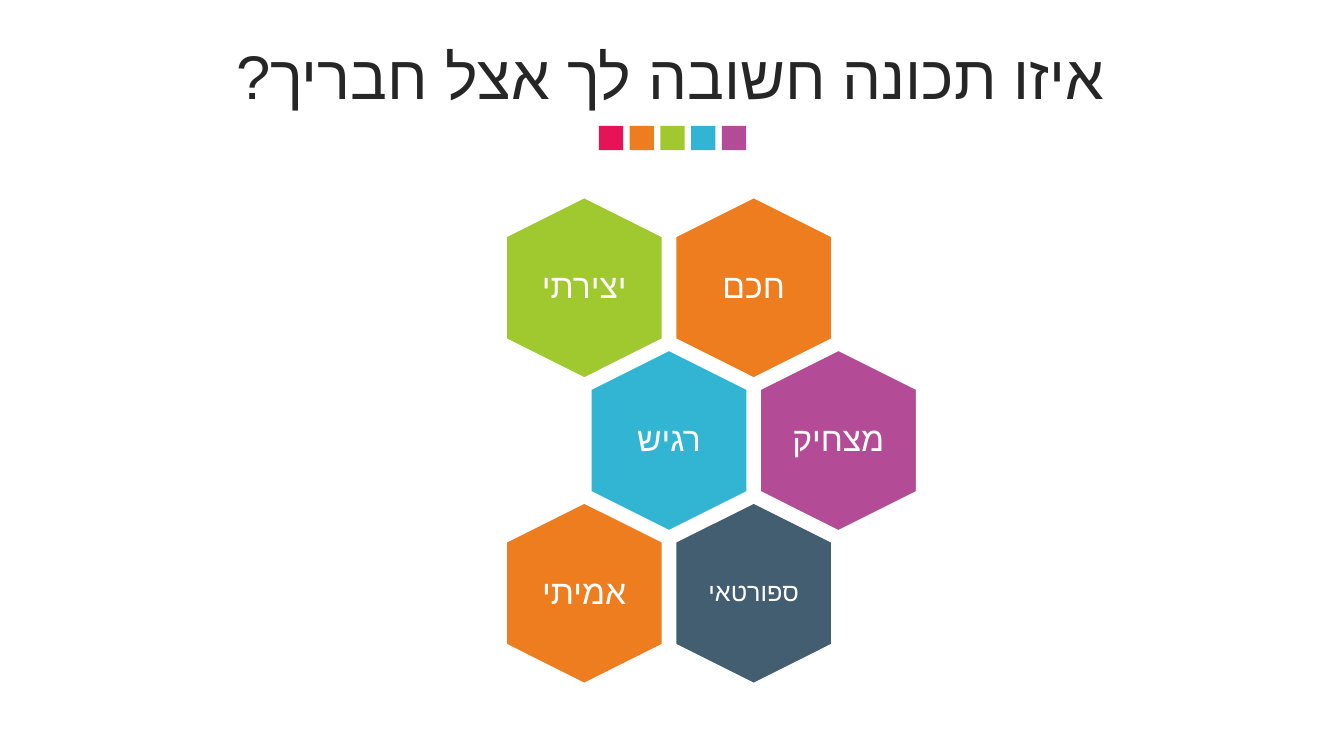
from dataclasses import dataclass

from pptx import Presentation
from pptx.dml.color import RGBColor
from pptx.enum.shapes import MSO_SHAPE
from pptx.enum.text import MSO_ANCHOR, MSO_AUTO_SIZE, PP_ALIGN
from pptx.oxml.ns import qn
from pptx.util import Inches, Pt

RECT, HEX = MSO_SHAPE.RECTANGLE, MSO_SHAPE.HEXAGON
MIDDLE, CENTER, FIXED = MSO_ANCHOR.MIDDLE, PP_ALIGN.CENTER, MSO_AUTO_SIZE.NONE


@dataclass
class Theme:
    font: str = "Arial"
    ink: str = "262626"
    white: str = "FFFFFF"
    red: str = "E61358"
    orange: str = "ED7D1F"
    green: str = "A0C82F"
    blue: str = "32B5D3"
    purple: str = "B44B97"
    slate: str = "435E71"
    head: int = 44
    label: int = 24
    small: int = 18


theme = Theme()


def write(box, text, size, color, inset=0.0):
    """Fill a box with one centred right-to-left line."""
    frame = box.text_frame
    frame.word_wrap = True
    frame.auto_size = FIXED
    frame.vertical_anchor = MIDDLE
    frame.margin_left = frame.margin_right = Inches(inset)
    frame.margin_top = frame.margin_bottom = Inches(inset / 2)
    para = frame.paragraphs[0]
    para.alignment = CENTER
    para.line_spacing = 0.9
    para._p.get_or_add_pPr().set("rtl", "1")
    run = para.add_run()
    run.text = text
    run.font.size = Pt(size)
    run.font.name = theme.font
    run.font.color.rgb = RGBColor.from_string(color)
    script = run._r.get_or_add_rPr().makeelement(qn("a:cs"), {"typeface": theme.font})
    run.font._element.append(script)


def draw(kind, left, top, width, height, color):
    """Add a flat filled shape without an outline."""
    shape = slide.shapes.add_shape(
        kind, Inches(left), Inches(top), Inches(width), Inches(height))
    shape.shadow.inherit = False
    shape.fill.solid()
    shape.fill.fore_color.rgb = RGBColor.from_string(color)
    shape.line.fill.background()
    return shape


deck = Presentation()
deck.slide_width, deck.slide_height = Inches(13.33), Inches(7.5)
slide = deck.slides.add_slide(deck.slide_layouts[5])

# Title
title = slide.shapes.title
title.left, title.top = Inches(0.24), Inches(0.39)
title.width, title.height = Inches(12.66), Inches(0.79)
write(title, "איזו תכונה חשובה לך אצל חבריך? ", theme.head, theme.ink, inset=0.1)

# Row of colour squares
squares = [theme.red, theme.orange, theme.green, theme.blue, theme.purple]
for i, color in enumerate(squares):
    draw(RECT, 5.94 + i * 0.305, 1.25, 0.24, 0.24, color)

# Honeycomb of traits: row, column, text, colour, size
traits = [
    (0, 1, "חכם", theme.orange, theme.label),
    (0, 0, "יצירתי", theme.green, theme.label),
    (1, 0, "רגיש", theme.blue, theme.label),
    (1, 1, "מצחיק", theme.purple, theme.label),
    (2, 1, "ספורטאי", theme.slate, theme.small),
    (2, 0, "אמיתי", theme.orange, theme.label),
]
long, short = 1.79, 1.55
wide, tall = 1.07, 1.23
step, drop = 1.68, 1.515
for row, col, text, color, size in traits:
    # Odd rows shift by half a step
    left = 4.9 + (col + row % 2 / 2) * step
    top = 2.08 + row * drop
    cell = draw(HEX, left, top, long, short, color)
    cell.rotation = 90
    cell.adjustments[0] = 0.25
    cell.adjustments[1] = 1.1547
    cell.line.color.rgb = RGBColor.from_string(theme.white)
    cell.line.width = Pt(1)
    label = slide.shapes.add_textbox(
        Inches(left + (long - wide) / 2), Inches(top + (short - tall) / 2),
        Inches(wide), Inches(tall))
    write(label, text, size, theme.white)

deck.save("out.pptx")
